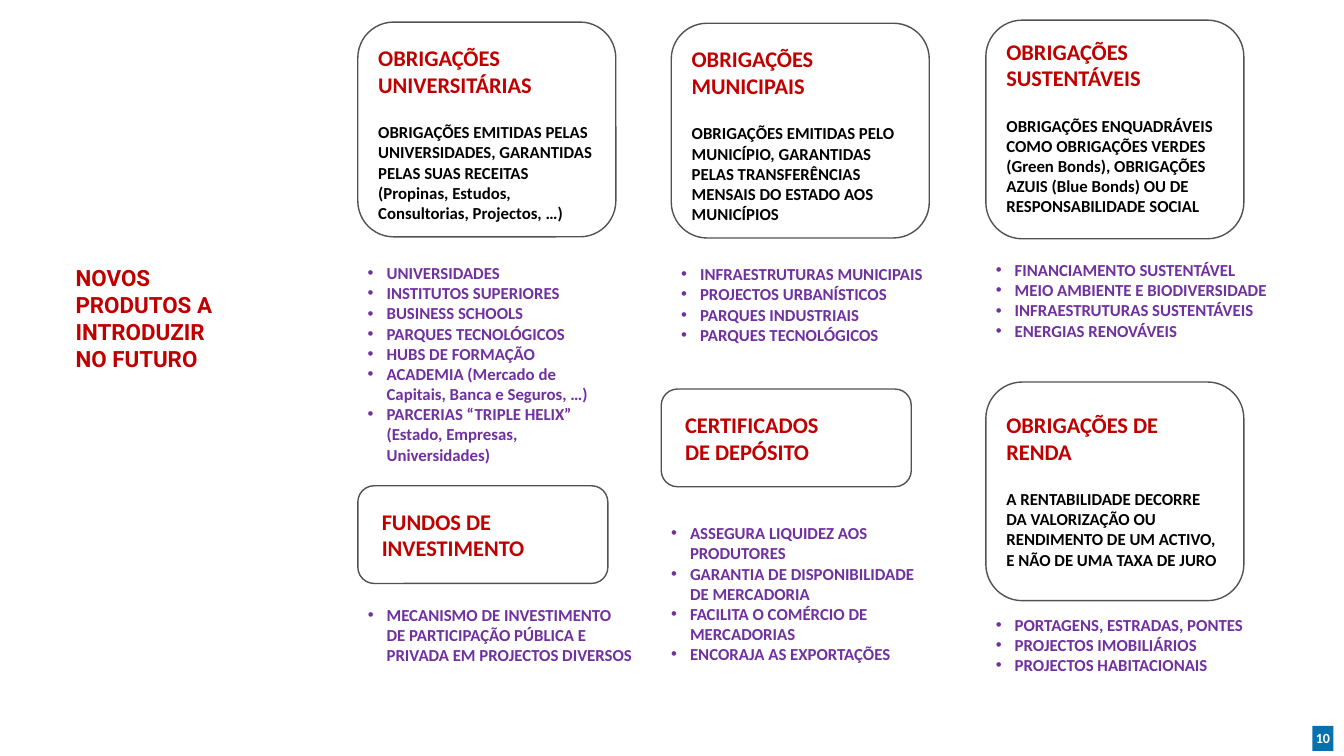
"""Build the slide on new products to be introduced in the future."""
from dataclasses import dataclass

import lxml.etree
import pptx
import pptx.dml.color
import pptx.enum.shapes
import pptx.enum.text
import pptx.oxml.ns
import pptx.util

Pt = pptx.util.Pt
Anchor = pptx.enum.text.MSO_ANCHOR
Align = pptx.enum.text.PP_ALIGN
Preset = pptx.enum.shapes.MSO_SHAPE


@dataclass(frozen=True)
class Theme:
    """Colours, fonts and type sizes of the slide."""
    red: str = "C00000"
    purple: str = "7030A0"
    black: str = "000000"
    white: str = "FFFFFF"
    blue: str = "0771B0"
    outline: str = "525252"
    title_font: str = "Roboto"
    body_font: str = "Calibri"
    heading: int = 16
    body: int = 12
    number: int = 10


@dataclass(frozen=True)
class Product:
    """One product: its card box, wording and the list below the card."""
    box: tuple
    headings: tuple
    bullets: tuple
    list_gap: float
    list_width: float
    description: str = ""
    text_top: float = 0


THEME = Theme()
LEFT, RIGHT = 255.6, 704.2
CARD_WIDTH = 184.3
SMALL_CARD = (178.6, 69.8)

PRODUCTS = (
    Product((LEFT, 15.8, CARD_WIDTH, 153.4), ("OBRIGAÇÕES", "UNIVERSITÁRIAS"),
            ("UNIVERSIDADES", "INSTITUTOS SUPERIORES", "BUSINESS SCHOOLS",
             "PARQUES TECNOLÓGICOS", "HUBS DE FORMAÇÃO",
             "ACADEMIA (Mercado de Capitais, Banca e Seguros, …)",
             "PARCERIAS “TRIPLE HELIX” (Estado, Empresas, Universidades)"),
            15, 188,
            "OBRIGAÇÕES EMITIDAS PELAS UNIVERSIDADES, GARANTIDAS PELAS SUAS "
            "RECEITAS (Propinas, Estudos, Consultorias, Projectos, …)", 8.5),
    Product((479.5, 16.6, CARD_WIDTH, 153.4), ("OBRIGAÇÕES MUNICIPAIS",),
            ("INFRAESTRUTURAS MUNICIPAIS", "PROJECTOS URBANÍSTICOS",
             "PARQUES INDUSTRIAIS", "PARQUES TECNOLÓGICOS"),
            15, 188,
            "OBRIGAÇÕES EMITIDAS PELO MUNICÍPIO, GARANTIDAS PELAS "
            "TRANSFERÊNCIAS MENSAIS DO ESTADO AOS MUNICÍPIOS", 8.5),
    Product((RIGHT, 14.4, CARD_WIDTH, 156.2), ("OBRIGAÇÕES", "SUSTENTÁVEIS"),
            ("FINANCIAMENTO SUSTENTÁVEL", "MEIO AMBIENTE E BIODIVERSIDADE",
             "INFRAESTRUTURAS SUSTENTÁVEIS", "ENERGIAS RENOVÁVEIS"),
            11.5, 222.5,
            "OBRIGAÇÕES ENQUADRÁVEIS COMO OBRIGAÇÕES VERDES (Green Bonds), "
            "OBRIGAÇÕES AZUIS (Blue Bonds) OU DE RESPONSABILIDADE SOCIAL", 5),
    Product((RIGHT, 272.9, CARD_WIDTH, 156.2), ("OBRIGAÇÕES DE RENDA",),
            ("PORTAGENS, ESTRADAS, PONTES", "PROJECTOS IMOBILIÁRIOS",
             "PROJECTOS HABITACIONAIS"),
            6.5, 222.5,
            "A RENTABILIDADE DECORRE DA VALORIZAÇÃO OU RENDIMENTO DE UM "
            "ACTIVO, E NÃO DE UMA TAXA DE JURO", 13.3),
    Product((LEFT, 347, *SMALL_CARD), ("FUNDOS DE INVESTIMENTO",),
            ("MECANISMO DE INVESTIMENTO DE PARTICIPAÇÃO PÚBLICA E PRIVADA EM "
             "PROJECTOS DIVERSOS",),
            11.5, 204),
    Product((472.3, 277.9, *SMALL_CARD), ("CERTIFICADOS", "DE DEPÓSITO"),
            ("ASSEGURA LIQUIDEZ AOS PRODUTORES",
             "GARANTIA DE DISPONIBILIDADE DE MERCADORIA",
             "FACILITA O COMÉRCIO DE MERCADORIAS", "ENCORAJA AS EXPORTAÇÕES"),
            22.3, 204),
)


def colour(value):
    """Turn a hexadecimal string into a colour."""
    return pptx.dml.color.RGBColor.from_string(value)


def write(frame, lines, size, ink, font=THEME.body_font, align=Align.LEFT):
    """Fill a text frame with bold paragraphs and return them."""
    frame.text = "\n".join(lines)
    for paragraph in frame.paragraphs:
        style(paragraph, size, ink, font, align)
    return frame.paragraphs


def style(paragraph, size, ink, font=THEME.body_font, align=Align.LEFT):
    """Set the type and alignment of one paragraph."""
    paragraph.alignment = align
    paragraph.font.name = font
    paragraph.font.size = Pt(size)
    paragraph.font.bold = True
    paragraph.font.color.rgb = colour(ink)


def add_panel(slide, preset, box, fill, line=None):
    """Draw a flat filled shape in the given box."""
    shape = slide.shapes.add_shape(preset, *map(Pt, box))
    shape.shadow.inherit = False
    shape.fill.solid()
    shape.fill.fore_color.rgb = colour(fill)
    if line:
        shape.line.color.rgb = colour(line)
        shape.line.width = Pt(1)
    else:
        shape.line.fill.background()
    return shape


def add_title(slide, box):
    """Place and format the title placeholder."""
    title = slide.shapes.title
    title.left, title.top, title.width, title.height = map(Pt, box)
    frame = title.text_frame
    frame.word_wrap = True
    frame.auto_size = pptx.enum.text.MSO_AUTO_SIZE.NONE
    frame.vertical_anchor = Anchor.TOP
    write(frame, ("NOVOS", "PRODUTOS A INTRODUZIR NO FUTURO"),
          THEME.heading, THEME.red, THEME.title_font)


def add_card(slide, product):
    """Draw the rounded card with its heading and description."""
    shape = add_panel(slide, Preset.ROUNDED_RECTANGLE, product.box,
                      THEME.white, THEME.outline)
    frame = shape.text_frame
    frame.word_wrap = True
    write(frame, product.headings, THEME.heading, THEME.red)
    if product.description:
        frame.vertical_anchor = Anchor.TOP
        frame.margin_top, frame.margin_bottom = Pt(product.text_top), Pt(0)
        paragraph = frame.add_paragraph()
        paragraph.text = product.description
        paragraph.space_before = Pt(17)
        style(paragraph, THEME.body, THEME.black)
    else:
        frame.vertical_anchor = Anchor.MIDDLE
        frame.margin_left = Pt(13.7)


def add_bullet(paragraph, indent):
    """Give a paragraph a hanging round bullet."""
    properties = paragraph._p.get_or_add_pPr()
    properties.set("marL", str(Pt(indent)))
    properties.set("indent", str(-Pt(indent)))
    qualified = pptx.oxml.ns.qn
    lxml.etree.SubElement(properties, qualified("a:buFont"), typeface="Arial")
    lxml.etree.SubElement(properties, qualified("a:buChar"), char="•")


def add_list(slide, product):
    """Place the bulleted list under the product's card."""
    left, top, _, height = product.box
    list_top = top + height + product.list_gap
    list_height = 7.2 + 14.6 * len(product.bullets)
    text_box = slide.shapes.add_textbox(
        *map(Pt, (left, list_top, product.list_width, list_height)))
    frame = text_box.text_frame
    frame.word_wrap = True
    frame.text = "\n".join(product.bullets)
    for paragraph in frame.paragraphs:
        add_bullet(paragraph, 13.5)
        style(paragraph, THEME.body, THEME.purple)


def add_page_number(slide, box):
    """Draw the page number tile."""
    frame = add_panel(slide, Preset.RECTANGLE, box, THEME.blue).text_frame
    frame.margin_left = frame.margin_right = Pt(0)
    frame.margin_top = frame.margin_bottom = Pt(0)
    frame.word_wrap = False
    frame.vertical_anchor = Anchor.MIDDLE
    write(frame, ("10",), THEME.number, THEME.white, align=Align.CENTER)


def main():
    """Assemble the slide and save it."""
    presentation = pptx.Presentation()
    presentation.slide_width, presentation.slide_height = Pt(960), Pt(540)
    slide = presentation.slides.add_slide(presentation.slide_layouts[5])
    add_title(slide, (46.8, 185, 116.6, 85))
    for product in PRODUCTS:
        add_card(slide, product)
        add_list(slide, product)
    add_page_number(slide, (937.4, 518.4, 15.1, 18))
    presentation.save("out.pptx")


if __name__ == "__main__":
    main()
